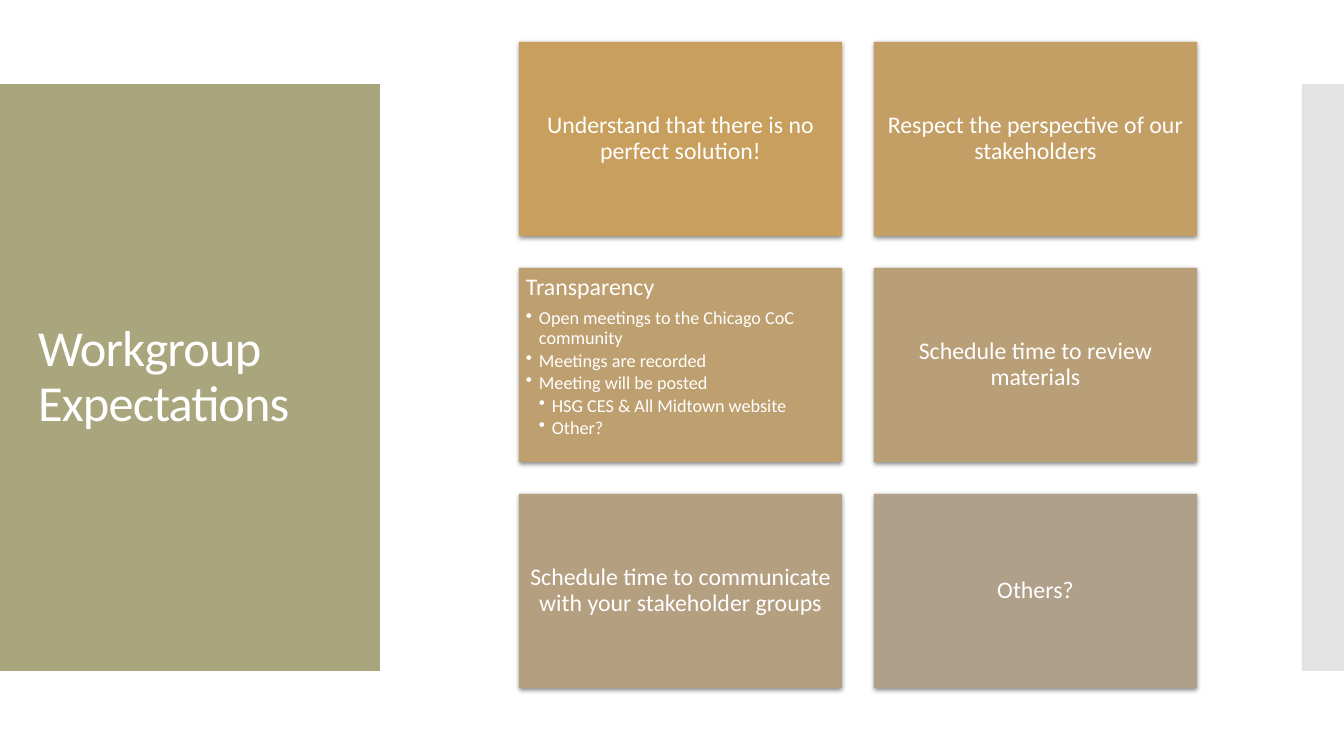
from lxml import etree
from pptx import Presentation
from pptx.dml.color import RGBColor
from pptx.enum.shapes import MSO_SHAPE
from pptx.enum.text import MSO_ANCHOR, MSO_AUTO_SIZE, PP_ALIGN
from pptx.oxml.ns import qn
from pptx.util import Pt

RECTANGLE = MSO_SHAPE.RECTANGLE
TOP, MIDDLE = MSO_ANCHOR.TOP, MSO_ANCHOR.MIDDLE
NO_AUTOFIT = MSO_AUTO_SIZE.NONE
LEFT, CENTER = PP_ALIGN.LEFT, PP_ALIGN.CENTER

PX = 914400 / 100.8
FONT = "Calibri"
COLORS = {
    "text": "FFFFFF",
    "panel": "A9A57C",
    "strip": "C8C8C8",
    "shadow": "000000",
    "tile 1": "C89F5D",
    "tile 2": "C39F66",
    "tile 3": "BE9F6F",
    "tile 4": "B99F78",
    "tile 5": "B59F81",
    "tile 6": "B1A089",
}

# Each tile holds a heading and its bullets as (level, text)
TILES = [
    ("Understand that there is no perfect solution!", []),
    ("Respect the perspective of our stakeholders", []),
    ("Transparency", [
        (1, "Open meetings to the Chicago CoC community"),
        (1, "Meetings are recorded"),
        (1, "Meeting will be posted"),
        (2, "HSG CES & All Midtown website"),
        (2, "Other?"),
    ]),
    ("Schedule time to review materials", []),
    ("Schedule time to communicate with your stakeholder groups", []),
    ("Others?", []),
]
COLUMNS = 2
GRID_LEFT, GRID_TOP = 519, 42
TILE_WIDTH, TILE_HEIGHT, GAP = 323, 194, 32
INSET = 7
BULLET_INDENT = 13


def px(length):
    return round(length * PX)


def add_block(slide, left, top, width, height, color):
    block = slide.shapes.add_shape(
        RECTANGLE, px(left), px(top), px(width), px(height))
    block.fill.solid()
    block.fill.fore_color.rgb = RGBColor.from_string(COLORS[color])
    block.line.fill.background()
    block.shadow.inherit = False
    return block


def add_alpha(color_element, percent):
    alpha = etree.SubElement(color_element, qn("a:alpha"))
    alpha.set("val", str(percent * 1000))


def add_shadow(block):
    effects = block._element.spPr.find(qn("a:effectLst"))
    shadow = etree.SubElement(
        effects, qn("a:outerShdw"), blurRad=str(Pt(3.5)), dist=str(Pt(1.1)),
        dir="5400000", algn="ctr", rotWithShape="0")
    color = etree.SubElement(shadow, qn("a:srgbClr"), val=COLORS["shadow"])
    add_alpha(color, 45)


def add_bullet(para, level):
    para.level = level
    properties = para._p.get_or_add_pPr()
    properties.set("marL", str(px(BULLET_INDENT * level)))
    properties.set("indent", str(px(-BULLET_INDENT)))
    etree.SubElement(properties, qn("a:buChar"), char="•")


def format_para(para, size, align, space_after):
    para.alignment = align
    para.line_spacing = 0.9
    para.space_before = Pt(0)
    para.space_after = Pt(space_after)
    for span in para.runs:
        span.font.name = FONT
        span.font.size = Pt(size)
        span.font.color.rgb = RGBColor.from_string(COLORS["text"])


def add_title(slide, text):
    title = slide.shapes.title
    title.left, title.top = px(28), px(124)
    title.width, title.height = px(325), px(507)
    frame = title.text_frame
    frame.text = text
    frame.word_wrap = True
    frame.auto_size = NO_AUTOFIT
    frame.vertical_anchor = MIDDLE
    para = frame.paragraphs[0]
    format_para(para, 36, LEFT, 0)
    para.runs[0]._r.get_or_add_rPr().set("spc", "-60")
    # Bring the title in front of its panel
    slide.shapes._spTree.append(title._element)


def add_tile(slide, index, heading, bullets):
    row, column = divmod(index, COLUMNS)
    tile = add_block(
        slide,
        GRID_LEFT + column * (TILE_WIDTH + GAP),
        GRID_TOP + row * (TILE_HEIGHT + GAP),
        TILE_WIDTH, TILE_HEIGHT, f"tile {index + 1}")
    add_shadow(tile)
    frame = tile.text_frame
    frame.word_wrap = True
    frame.margin_left = frame.margin_right = px(INSET)
    frame.margin_top = frame.margin_bottom = px(INSET)
    frame.vertical_anchor = TOP if bullets else MIDDLE
    frame.text = heading
    format_para(frame.paragraphs[0], 17, LEFT if bullets else CENTER, 6)
    for level, text in bullets:
        para = frame.add_paragraph()
        para.text = text
        add_bullet(para, level)
        format_para(para, 13, LEFT, 2)


def main():
    deck = Presentation()
    deck.slide_width, deck.slide_height = px(1344), px(756)
    slide = deck.slides.add_slide(deck.slide_layouts.get_by_name("Title Only"))

    # Title panel and edge strip
    add_block(slide, 0, 84, 380, 587, "panel")
    add_title(slide, "Workgroup Expectations")
    strip = add_block(slide, 1302, 84, 42, 587, "strip")
    add_alpha(strip._element.spPr.find(".//" + qn("a:srgbClr")), 50)

    # Grid of expectations
    for index, (heading, bullets) in enumerate(TILES):
        add_tile(slide, index, heading, bullets)

    deck.save("out.pptx")


if __name__ == "__main__":
    main()
